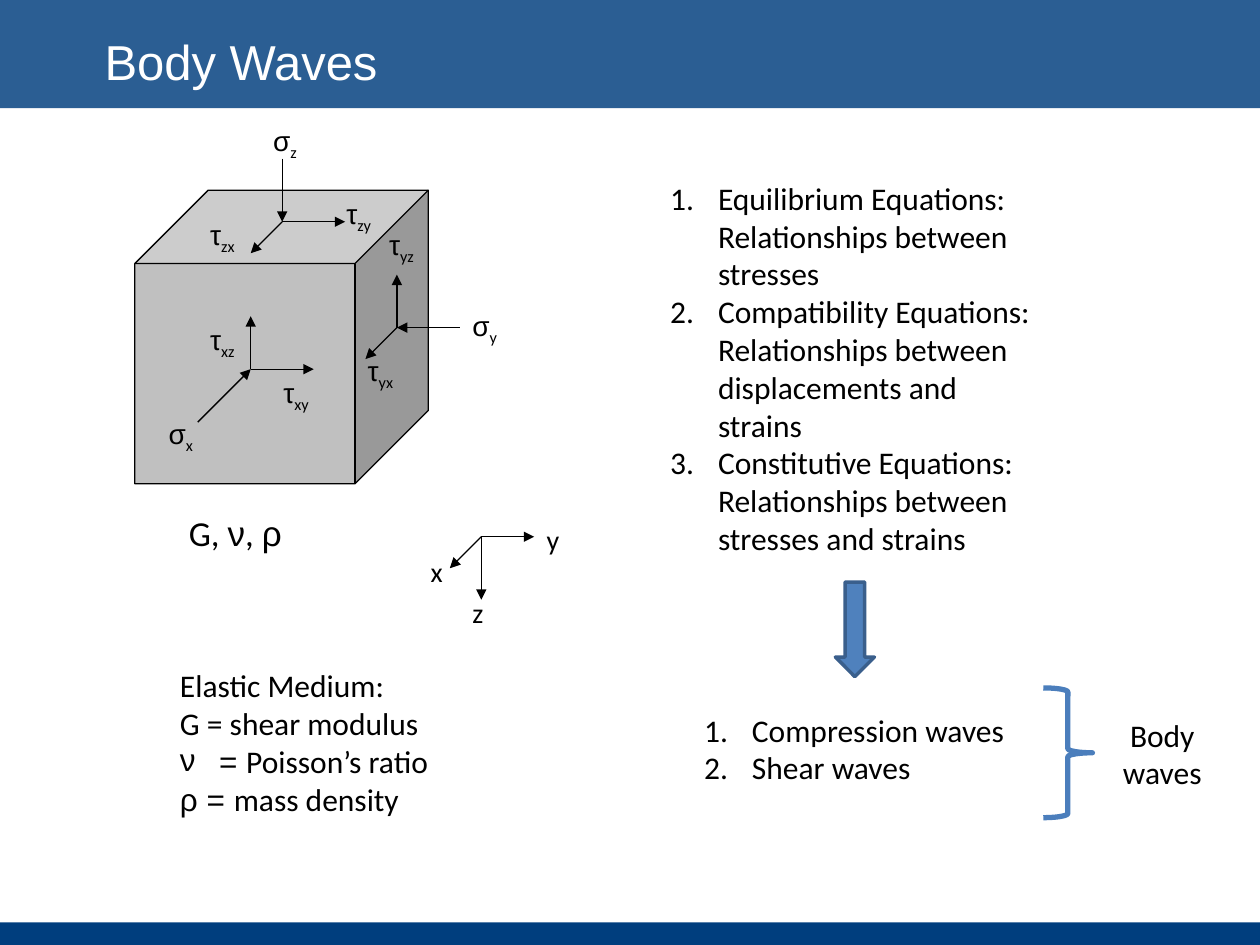
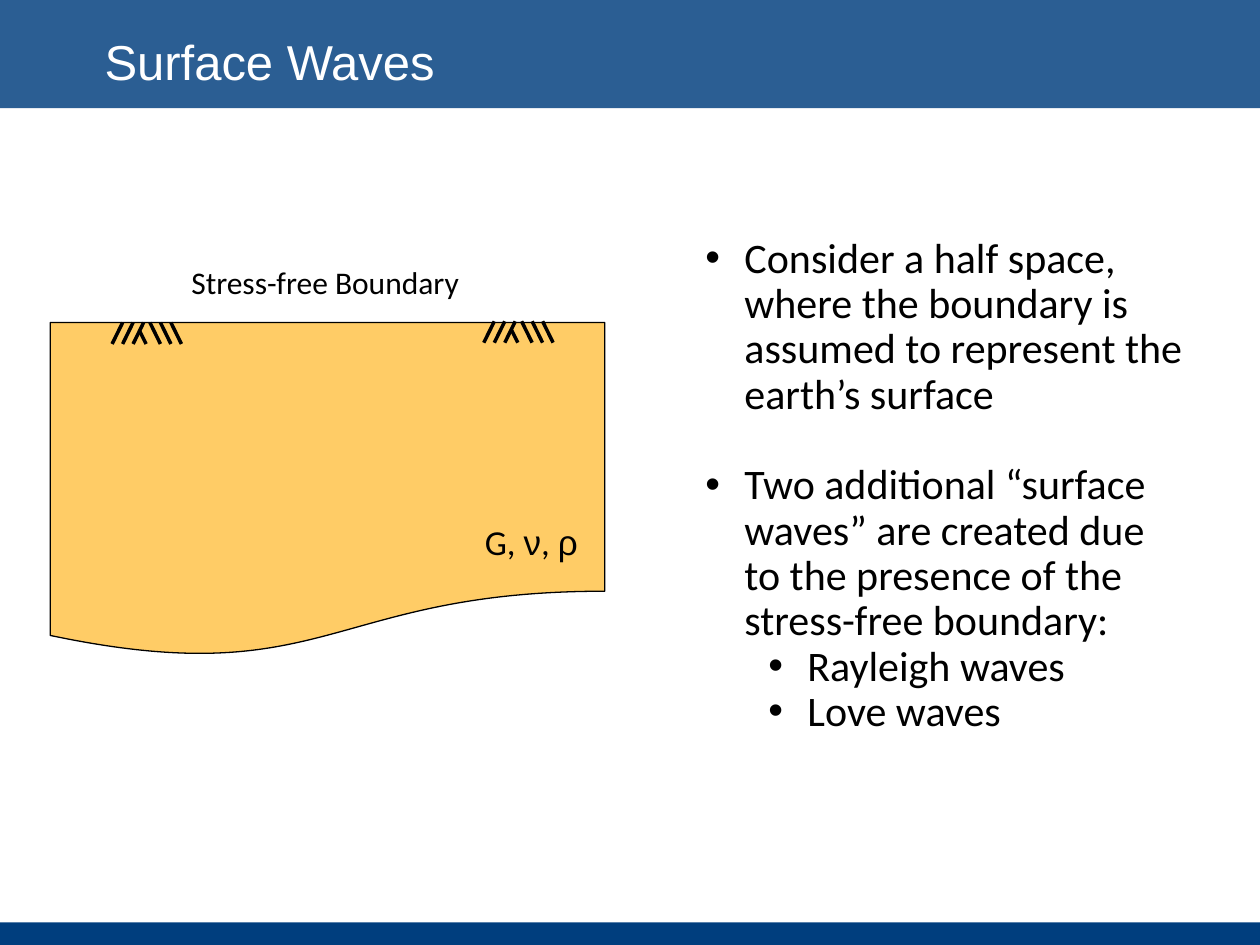
from dataclasses import dataclass

from lxml.etree import SubElement
from pptx import Presentation
from pptx.dml.color import RGBColor
from pptx.enum.shapes import MSO_CONNECTOR as CONN, MSO_SHAPE as SHAPE
from pptx.enum.text import MSO_ANCHOR as ANCHOR, MSO_AUTO_SIZE as FIT, PP_ALIGN as ALIGN
from pptx.oxml.ns import qn
from pptx.util import Inches, Pt


@dataclass(frozen=True)
class Theme:
    band: str = "003E7E"
    band_alpha: int = 83
    white: str = "FFFFFF"
    ink: str = "000000"
    cube: str = "C0C0C0"
    soil: str = "FFCC66"
    arrow: str = "4F81BD"
    arrow_edge: str = "3A5F8C"
    brace: str = "4B7EBC"
    symbol_font: str = "Arial"
    body_font: str = "Calibri"
    title_size: int = 28
    bullet_size: int = 24
    medium_size: int = 20
    body_size: int = 18
    label_size: int = 16
    thin: float = 0.75
    thick: float = 2
    heavy: float = 3


T = Theme()


@dataclass
class Run:
    text: str
    font: str = T.body_font
    sub: bool = False


@dataclass
class Para:
    runs: list
    bullet: str = ""
    left: float = 0
    hang: float = 0
    level: int = 0
    align: ALIGN = ALIGN.LEFT
    before: float = 0
    spacing: float = 1


def rgb(value):
    return RGBColor.from_string(value)


def symbol(text):
    return Run(text, T.symbol_font)


def plain(text, **options):
    return Para([Run(text)], **options)


def numbered(text):
    return plain(text, bullet="1.", left=0.38, hang=0.38)


def dotted(text, level=0, before=0):
    return plain(text, bullet="•", left=0.31 + 0.5 * level, hang=0.31,
                 level=level, before=before, spacing=0.9)


def add_run(p, text, font, size, color=T.ink):
    r = p.add_run()
    r.text = text
    r.font.name = font
    r.font.size = Pt(size)
    r.font.color.rgb = rgb(color)
    return r


def add_bullet(p, para):
    pPr = p._p.get_or_add_pPr()
    pPr.set("marL", str(Inches(para.left)))
    pPr.set("indent", str(-Inches(para.hang)))
    if para.bullet == "1.":
        SubElement(pPr, qn("a:buAutoNum"), type="arabicPeriod")
    else:
        SubElement(pPr, qn("a:buFont"), typeface=T.symbol_font)
        SubElement(pPr, qn("a:buChar"), char=para.bullet)


def add_text(s, at, paras, size=T.body_size, wrap=False):
    tf = s.shapes.add_textbox(*map(Inches, at)).text_frame
    tf.word_wrap = wrap
    tf.auto_size = FIT.NONE if wrap else FIT.SHAPE_TO_FIT_TEXT
    for i, para in enumerate(paras):
        p = tf.paragraphs[0] if i == 0 else tf.add_paragraph()
        p.alignment = para.align
        p.level = para.level
        p.line_spacing = para.spacing
        p.space_before = Pt(para.before)
        if para.bullet:
            add_bullet(p, para)
        for run in para.runs:
            r = add_run(p, run.text, run.font, size)
            if run.sub:
                r._r.get_or_add_rPr().set("baseline", "-25000")


def add_shape(s, kind, at, fill=None, line=None, width=T.thin):
    sp = s.shapes.add_shape(kind, *map(Inches, at))
    sp.shadow.inherit = False
    if fill:
        sp.fill.solid()
        sp.fill.fore_color.rgb = rgb(fill)
    else:
        sp.fill.background()
    if line:
        sp.line.color.rgb = rgb(line)
        sp.line.width = Pt(width)
    else:
        sp.line.fill.background()
    return sp


def add_line(s, start, end, width=T.thin, arrow=False):
    c = s.shapes.add_connector(CONN.STRAIGHT, *map(Inches, (*start, *end)))
    c.line.color.rgb = rgb(T.ink)
    c.line.width = Pt(width)
    if arrow:
        SubElement(c.line._get_or_add_ln(), qn("a:tailEnd"), type="triangle")
    SubElement(c._element.spPr, qn("a:effectLst"))


def add_arrows(s, origin, tips):
    for tip in tips:
        add_line(s, origin, tip, arrow=True)


def add_stress_label(s, left, top, letter, axes):
    width = 0.41 if len(axes) == 1 else 0.45
    add_text(s, (left, top, width, 0.37),
             [Para([symbol(letter), Run(axes, sub=True)])], T.label_size)


def add_medium_label(s, left, top):
    runs = [Run("G, "), symbol("ν"), Run(", "), symbol("ρ")]
    add_text(s, (left, top, 1.02, 0.43), [Para(runs)], T.medium_size)


def add_ground_hatch(s, left, top):
    pitch, depth = 1 / 12, 0.17
    for i in range(3):
        x = left + i * pitch
        add_line(s, (x + pitch, top), (x, top + depth), T.thick)
        add_line(s, (x + 0.3, top), (x + 0.3 + pitch, top + depth), T.thick)
    add_line(s, (left + 0.22, top + 0.07), (left + 0.27, top + depth), T.thick)


def add_bands(s):
    add_shape(s, SHAPE.RECTANGLE, (0, 7.32, 10, 0.18), T.band)
    header = add_shape(s, SHAPE.RECTANGLE, (0, 0, 10, 0.86), T.band)
    color = header._element.spPr.find(".//" + qn("a:srgbClr"))
    SubElement(color, qn("a:alpha"), val=str(T.band_alpha * 1000))


def new_slide(prs, title):
    s = prs.slides.add_slide(prs.slide_layouts[5])
    add_bands(s)
    sp = s.shapes.title
    s.shapes._spTree.append(sp._element)
    sp.left, sp.top, sp.width, sp.height = map(Inches, (0.73, 0.19, 6.77, 0.58))
    tf = sp.text_frame
    tf.vertical_anchor = ANCHOR.MIDDLE
    p = tf.paragraphs[0]
    p.alignment = ALIGN.LEFT
    add_run(p, title, T.symbol_font, T.title_size, T.white)
    return s


def add_stress_cube(s):
    cube = add_shape(s, SHAPE.CUBE, (1.07, 1.51, 2.33, 2.33), T.cube, T.ink)
    cube.adjustments[0] = 0.25
    top, side, front = (2.24, 1.76), (3.15, 2.6), (1.99, 2.93)
    for start, face in (((2.24, 1.26), top), ((3.65, 2.6), side), ((1.57, 3.35), front)):
        add_line(s, start, face, arrow=True)
    add_arrows(s, top, [(2.74, 1.76), (1.99, 2.01)])
    add_arrows(s, side, [(3.15, 2.18), (2.9, 2.85)])
    add_arrows(s, front, [(1.99, 2.51), (2.49, 2.93)])
    for left, y, letter, axes in (
        (1.24, 3.26, "σ", "x"), (3.65, 2.4, "σ", "y"), (2.07, 0.93, "σ", "z"),
        (2.15, 2.93, "τ", "xy"), (1.57, 2.51, "τ", "xz"), (1.57, 1.68, "τ", "zx"),
        (2.65, 1.51, "τ", "zy"), (2.82, 2.76, "τ", "yx"), (2.99, 1.76, "τ", "yz"),
    ):
        add_stress_label(s, left, y, letter, axes)


def add_axes(s):
    add_arrows(s, (3.82, 4.26), [(3.82, 4.76), (3.57, 4.51), (4.24, 4.26)])
    for left, top, axis in ((3.32, 4.35, "x"), (4.24, 4.1, "y"), (3.65, 4.68, "z")):
        add_text(s, (left, top, 0.31, 0.37), [plain(axis)], T.label_size)


def body_waves(prs):
    s = new_slide(prs, "Body Waves")
    add_stress_cube(s)
    add_axes(s)
    add_medium_label(s, 1.4, 4.01)
    add_text(s, (5.22, 1.37, 3.15, 3.13), [
        numbered("Equilibrium Equations: Relationships between stresses"),
        numbered("Compatibility Equations: Relationships between displacements and strains"),
        numbered("Constitutive Equations: Relationships between stresses and strains"),
    ], wrap=True)
    add_shape(s, SHAPE.DOWN_ARROW, (6.63, 4.62, 0.31, 0.75), T.arrow, T.arrow_edge, T.thick)
    add_text(s, (5.49, 5.59, 2.6, 0.71),
             [numbered("Compression waves"), numbered("Shear waves")])
    add_text(s, (1.33, 5.24, 2.18, 1.35), [
        plain("Elastic Medium:"),
        plain("G = shear modulus"),
        Para([symbol("= "), Run("Poisson’s ratio")], bullet="ν", left=0.31, hang=0.31),
        Para([symbol("ρ = "), Run("mass density")]),
    ])
    add_shape(s, SHAPE.RIGHT_BRACE, (8.28, 5.46, 0.39, 1.03), line=T.brace, width=T.heavy)
    add_text(s, (8.81, 5.63, 0.83, 0.71),
             [plain(word, align=ALIGN.CENTER) for word in ("Body", "waves")])


def surface_waves(prs):
    s = new_slide(prs, "Surface Waves")
    add_shape(s, SHAPE.FLOWCHART_DOCUMENT, (0.4, 2.56, 4.4, 2.66), T.soil, T.ink)
    add_ground_hatch(s, 0.89, 2.56)
    add_ground_hatch(s, 3.84, 2.55)
    add_text(s, (1.42, 2.04, 2.35, 0.4), [plain("Stress-free Boundary")])
    add_text(s, (5.5, 1.83, 3.99, 4.5), [
        dotted("Consider a half space, where the boundary is assumed to represent "
               "the earth’s surface"),
        dotted("Two additional “surface waves” are created due to the presence of "
               "the stress-free boundary:", before=26),
        dotted("Rayleigh waves", level=1),
        dotted("Love waves", level=1),
    ], T.bullet_size, wrap=True)
    add_medium_label(s, 3.75, 4.08)


def main():
    prs = Presentation()
    prs.slide_width, prs.slide_height = Inches(10), Inches(7.5)
    body_waves(prs)
    surface_waves(prs)
    prs.save("out.pptx")


if __name__ == "__main__":
    main()
